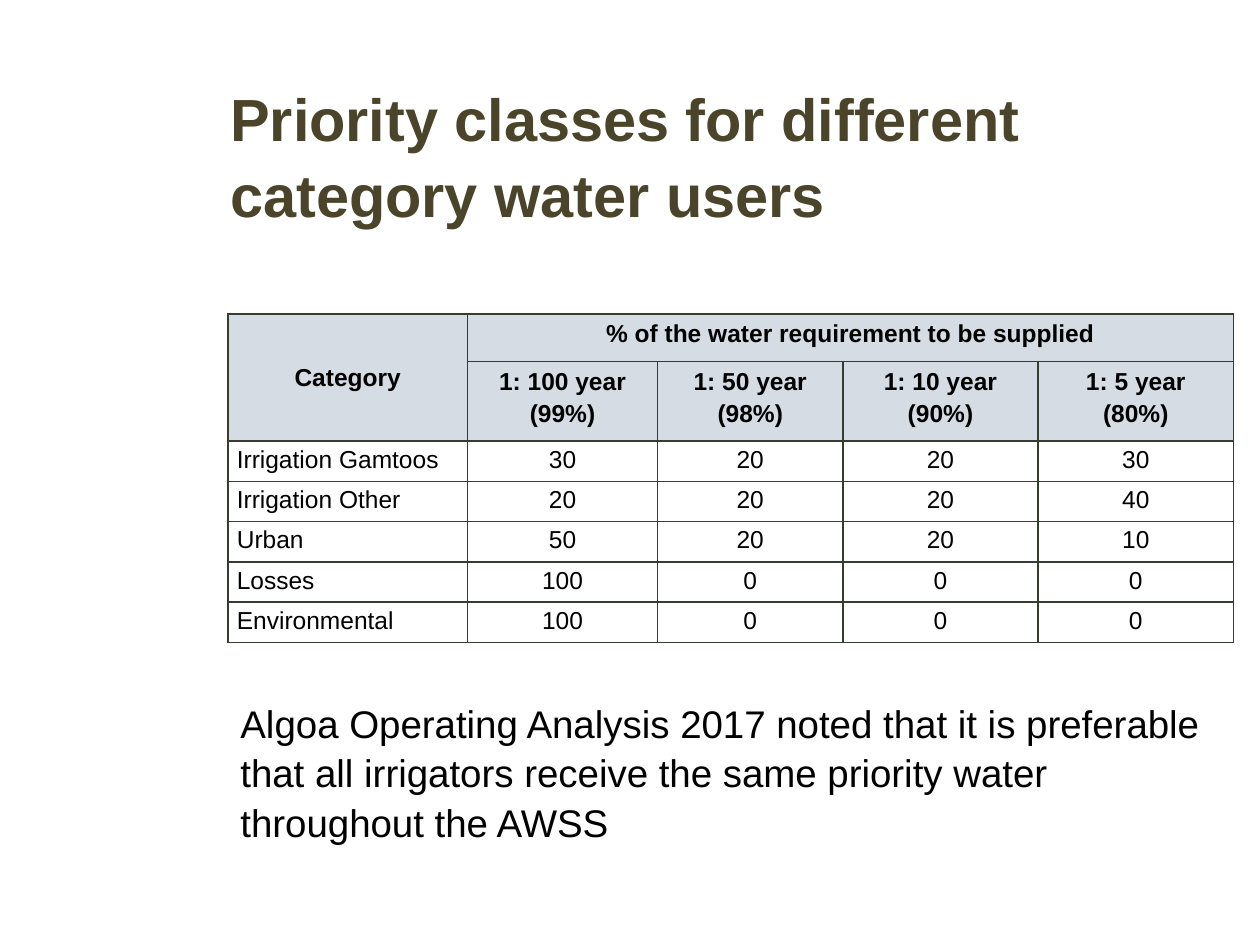
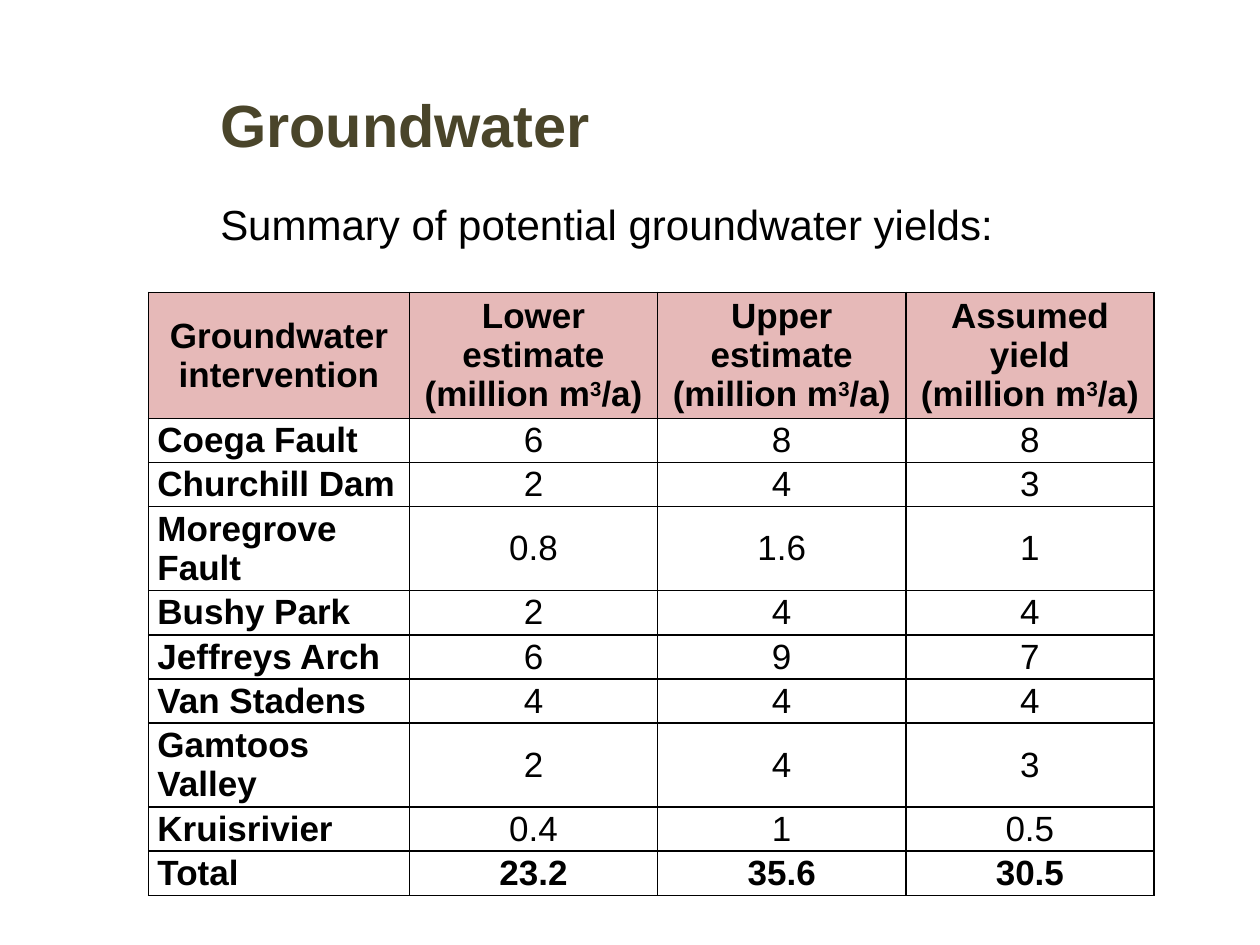
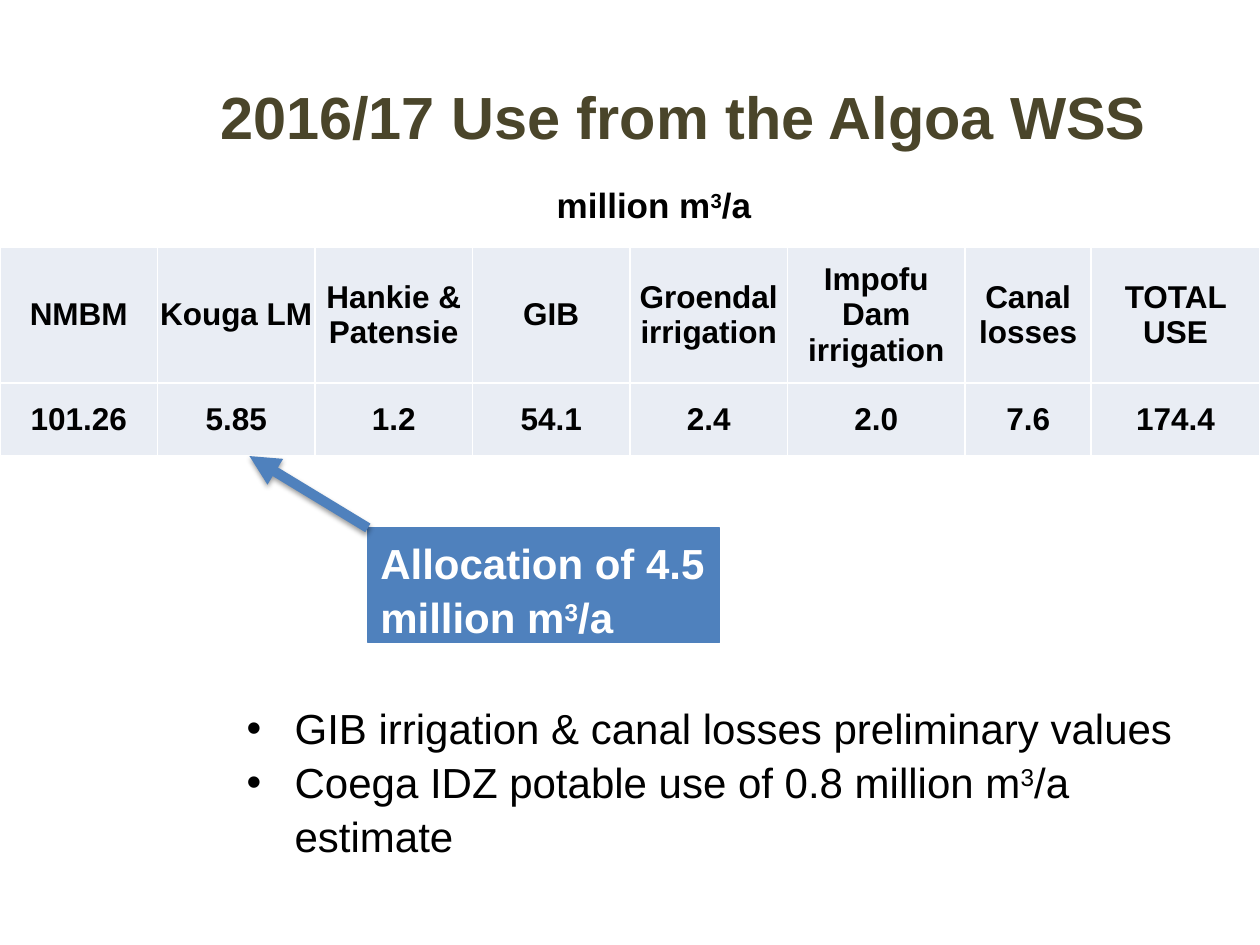
from lxml.etree import SubElement
from pptx import Presentation
from pptx.dml.color import RGBColor
from pptx.enum.shapes import MSO_CONNECTOR, MSO_SHAPE
from pptx.enum.text import MSO_ANCHOR as ANCHOR, PP_ALIGN as ALIGN
from pptx.oxml import parse_xml
from pptx.oxml.ns import nsdecls, qn
from pptx.util import Inches, Pt

FONT = "Arial"
OLIVE = RGBColor(0x4A, 0x45, 0x2A)
BLACK = RGBColor(0x00, 0x00, 0x00)
WHITE = RGBColor(0xFF, 0xFF, 0xFF)
BLUE = RGBColor(0x4F, 0x81, 0xBD)
DARK_GREEN = RGBColor(0x35, 0x3D, 0x30)
GREY_BLUE = RGBColor(0xD5, 0xDC, 0xE4)
PINK = RGBColor(0xE6, 0xB9, 0xB8)
PALE_BLUE = RGBColor(0xE9, 0xED, 0xF4)


def write(frame, text, size=24, color=BLACK, bold=False, align=ALIGN.LEFT,
          spacing=1.07, after=0, bullet=None):
    frame.word_wrap = True
    for index, line in enumerate(text.split("\n")):
        paragraph = frame.add_paragraph() if index else frame.paragraphs[0]
        if bullet:
            properties = paragraph._p.get_or_add_pPr()
            properties.set("marL", str(Inches(0.38)))
            properties.set("indent", str(-Inches(0.38)))
            SubElement(properties, qn("a:buFont")).set("typeface", FONT)
            SubElement(properties, qn("a:buChar")).set("char", bullet)
        paragraph.alignment = align
        paragraph.line_spacing = spacing
        paragraph.space_after = Pt(after)
        for position, piece in enumerate(line.split("^")):
            run = paragraph.add_run()
            run.text = piece
            run.font.name = FONT
            run.font.size = Pt(size)
            run.font.bold = bold
            run.font.color.rgb = color
            if position % 2:
                run._r.get_or_add_rPr().set("baseline", "30000")


def add_grid(slide, left, top, widths, heights, rows, border, header_rows,
             header_fill, body_fill, margins, size, header_spacing=1.0,
             left_column=True, bold_column=False, bold_rows=()):
    grid = slide.shapes.add_table(
        len(rows), len(widths), Inches(left), Inches(top),
        Inches(sum(widths)), Inches(sum(heights))).table
    grid.first_row = grid.horz_banding = False
    for column, width in zip(grid.columns, widths):
        column.width = Inches(width)
    for row, height in zip(grid.rows, heights):
        row.height = Inches(height)
    for r, values in enumerate(rows):
        header = r < header_rows
        fill = header_fill if header else body_fill
        for c, value in enumerate(values):
            cell = grid.cell(r, c)
            for side in ("lnL", "lnR", "lnT", "lnB"):
                cell._tc.get_or_add_tcPr().append(parse_xml(
                    f'<a:{side} {nsdecls("a")} w="12700"><a:solidFill>'
                    f'<a:srgbClr val="{border}"/></a:solidFill></a:{side}>'))
            if fill is None:
                cell.fill.background()
            else:
                cell.fill.solid()
                cell.fill.fore_color.rgb = fill
            cell.margin_left = cell.margin_right = Inches(margins[0])
            cell.margin_top, cell.margin_bottom = map(Inches, margins[1:])
            cell.vertical_anchor = ANCHOR.MIDDLE
            if value:
                write(cell.text_frame, value, size=size,
                      bold=header or r in bold_rows or (bold_column and c == 0),
                      align=ALIGN.LEFT if left_column and c == 0 and not header
                      else ALIGN.CENTER,
                      spacing=header_spacing if header else 1.0)
    return grid


deck = Presentation()
deck.slide_width, deck.slide_height = Inches(10), Inches(7.5)
priority, groundwater, usage = [
    deck.slides.add_slide(deck.slide_layouts[6]) for _ in range(3)]

TITLE = dict(size=34, color=OLIVE, bold=True)
passages = [
    (priority, (1.73, 0.56, 8.12, 1.25),
     "Priority classes for different category water users", TITLE),
    (priority, (1.81, 5.48, 7.97, 1.21),
     "Algoa Operating Analysis 2017 noted that it is preferable that all "
     "irrigators receive the same priority water throughout the AWSS",
     dict(size=22)),
    (groundwater, (1.65, 0.61, 8.12, 0.67), "Groundwater", TITLE),
    (groundwater, (1.65, 1.5, 7.04, 0.5),
     "Summary of potential groundwater yields:", {}),
    (usage, (1.65, 0.55, 8.12, 0.67), "2016/17 Use from the Algoa WSS", TITLE),
    (usage, (1.86, 5.5, 7.92, 1.31),
     "GIB irrigation & canal losses preliminary values\n"
     "Coega IDZ potable use of 0.8 million m^3^/a estimate",
     dict(bullet="•")),
]
for slide, place, text, style in passages:
    box = slide.shapes.add_textbox(*map(Inches, place))
    write(box.text_frame, text, **style)

supply = add_grid(
    priority, 1.81, 2.49, [1.9, 1.51, 1.47, 1.55, 1.55],
    [0.38, 0.63] + [0.32] * 5,
    [["Category", "% of the water requirement to be supplied", "", "", ""],
     ["", "1: 100 year\n(99%)", "1: 50 year\n(98%)", "1: 10 year\n(90%)",
      "1: 5 year\n(80%)"],
     ["Irrigation Gamtoos", "30", "20", "20", "30"],
     ["Irrigation Other", "20", "20", "20", "40"],
     ["Urban", "50", "20", "20", "10"],
     ["Losses", "100", "0", "0", "0"],
     ["Environmental", "100", "0", "0", "0"]],
    DARK_GREEN, 2, GREY_BLUE, None, (0.07, 0.02, 0.04), 14,
    header_spacing=1.15)
supply.cell(0, 0).merge(supply.cell(1, 0))
supply.cell(0, 1).merge(supply.cell(0, 4))
for r, c in [(0, 1), (1, 1), (1, 2), (1, 3), (1, 4)]:
    supply.cell(r, c).vertical_anchor = ANCHOR.TOP

UNIT = "million m^3^/a"
add_grid(
    groundwater, 1.18, 2.32, [2.07] + [1.97] * 3, [0.7] + [0.35] * 9,
    [["Groundwater intervention"]
     + [f"{measure}\n({UNIT})" for measure in
        ("Lower estimate", "Upper estimate", "Assumed yield")],
     ["Coega Fault", "6", "8", "8"],
     ["Churchill Dam", "2", "4", "3"],
     ["Moregrove Fault", "0.8", "1.6", "1"],
     ["Bushy Park", "2", "4", "4"],
     ["Jeffreys Arch", "6", "9", "7"],
     ["Van Stadens", "4", "4", "4"],
     ["Gamtoos Valley", "2", "4", "3"],
     ["Kruisrivier", "0.4", "1", "0.5"],
     ["Total", "23.2", "35.6", "30.5"]],
    BLACK, 1, PINK, WHITE, (0.07, 0, 0), 20, bold_column=True, bold_rows=(9,))

add_grid(
    usage, 0, 1.96, [1.25] * 5 + [1.41, 1, 1.34], [1.08, 0.58],
    [["NMBM", "Kouga LM", "Hankie & Patensie", "GIB", "Groendal irrigation",
      "Impofu Dam irrigation", "Canal losses", "TOTAL USE"],
     ["101.26", "5.85", "1.2", "54.1", "2.4", "2.0", "7.6", "174.4"]],
    WHITE, 1, PALE_BLUE, PALE_BLUE, (0, 0, 0), 18, left_column=False,
    bold_rows=(1,))

panels = [
    ((4.32, 1.36, 1.82, 0.49), WHITE, UNIT,
     dict(size=20, align=ALIGN.JUSTIFY, spacing=1.15, after=5)),
    ((2.92, 4.19, 2.79, 0.91), BLUE, f"Allocation of 4.5 {UNIT}",
     dict(color=WHITE)),
]
for place, fill, text, style in panels:
    panel = usage.shapes.add_shape(MSO_SHAPE.RECTANGLE, *map(Inches, place))
    panel.shadow.inherit = False
    panel.fill.solid()
    panel.fill.fore_color.rgb = fill
    panel.line.color.rgb = fill
    panel.line.width = Pt(0.75)
    panel.text_frame.vertical_anchor = ANCHOR.TOP
    write(panel.text_frame, text, bold=True, **style)

pointer = usage.shapes.add_connector(
    MSO_CONNECTOR.STRAIGHT, *map(Inches, (2.92, 4.19, 1.98, 3.62)))
pointer.line.color.rgb = BLUE
pointer.line.width = Pt(5.75)
SubElement(pointer.line._get_or_add_ln(), qn("a:tailEnd")).set("type", "triangle")
pointer._element.spPr.append(parse_xml(
    f'<a:effectLst {nsdecls("a")}><a:outerShdw blurRad="{Pt(3.1)}" '
    f'dist="{Pt(1.6)}" dir="5400000" rotWithShape="0"><a:srgbClr val="{BLACK}">'
    '<a:alpha val="38000"/></a:srgbClr></a:outerShdw></a:effectLst>'))

deck.save("out.pptx")
